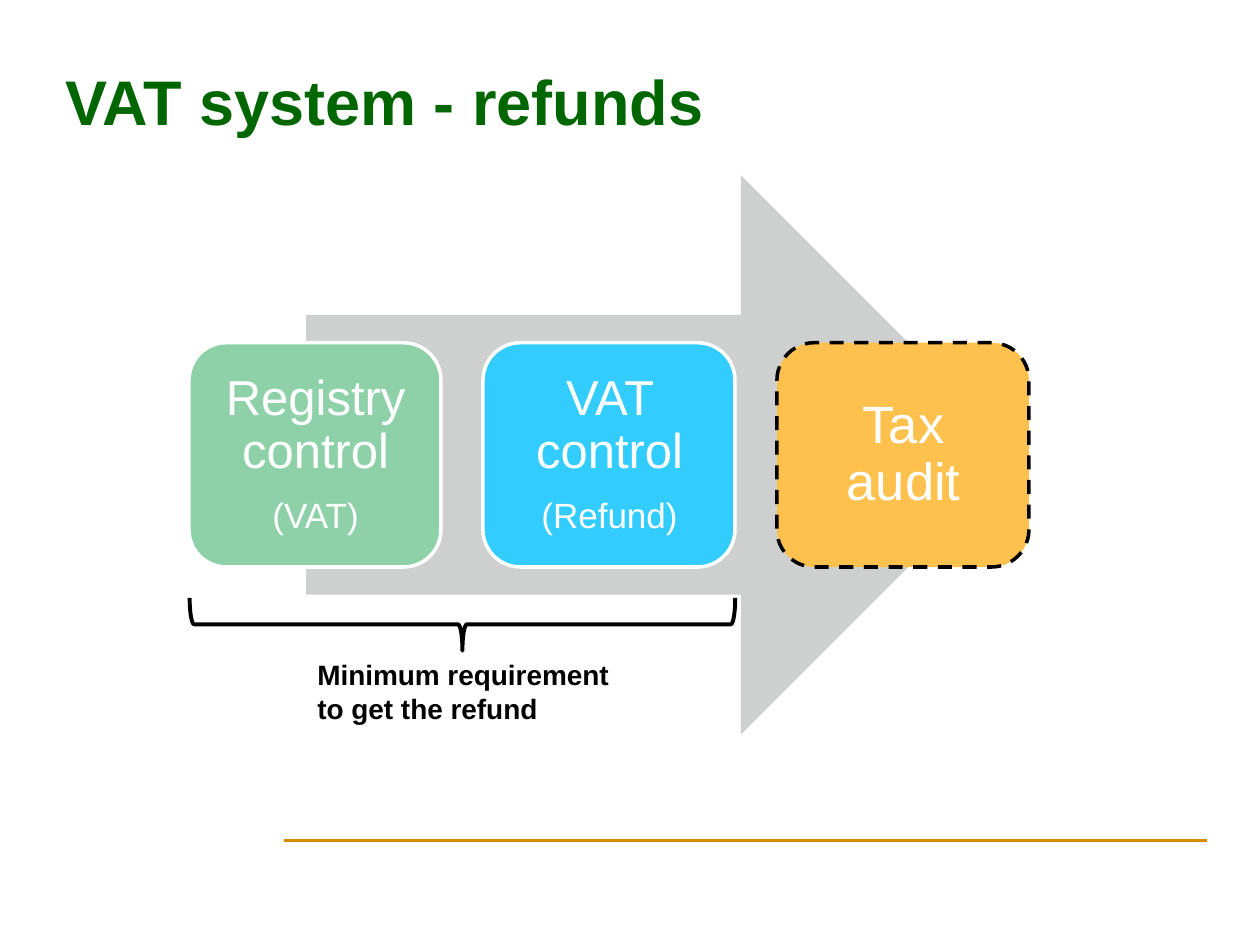
from lxml import etree
from pptx import Presentation
from pptx.dml.color import RGBColor
from pptx.enum import dml, shapes, text
from pptx.oxml import ns
from pptx.util import Inches, Pt

STEPS = [
    ("8ED1A9", "FFFFFF", [("Registry control", 28), ("(VAT)", 20)]),
    ("33CCFF", "FFFFFF", [("VAT control", 28), ("(Refund)", 20)]),
    ("FFC14D", "000000", [("Tax audit", 30)]),
]


def rgb(value):
    """Turn a hex string into a colour."""
    return RGBColor.from_string(value)


def add_span(para, words, size, color, bold=False):
    """Add one formatted run to a paragraph."""
    span = para.add_run()
    span.text = words
    span.font.name = "Arial"
    span.font.size = Pt(size)
    span.font.bold = bold
    span.font.color.rgb = rgb(color)


def add_figure(page, kind, place, fill, line=None, width=2):
    """Add a preset shape with a flat fill and an optional outline."""
    figure = page.shapes.add_shape(kind, *map(Inches, place))
    figure.shadow.inherit = False
    figure.fill.solid()
    figure.fill.fore_color.rgb = rgb(fill)
    if line:
        figure.line.color.rgb = rgb(line)
        figure.line.width = Pt(width)
    else:
        figure.line.fill.background()
    return figure


def add_label(page, place, words, size, color, anchor):
    """Add a bold, left-aligned text box."""
    box = page.shapes.add_textbox(*map(Inches, place))
    frame = box.text_frame
    frame.word_wrap = True
    frame.vertical_anchor = anchor
    add_span(frame.paragraphs[0], words, size, color, bold=True)


def add_step(page, left, fill, line, lines):
    """Add a rounded process step with its centred lines of text."""
    step = add_figure(page, shapes.MSO_SHAPE.ROUNDED_RECTANGLE,
                      (left, 2.72, 2, 1.78), fill, line)
    if line == "000000":
        step.line.dash_style = dml.MSO_LINE.DASH
    box = page.shapes.add_textbox(Inches(left + 0.09), Inches(2.81),
                                  Inches(1.83), Inches(1.6))
    frame = box.text_frame
    frame.word_wrap = True
    frame.vertical_anchor = text.MSO_ANCHOR.MIDDLE
    frame.margin_left = frame.margin_right = Inches(0.12)
    frame.margin_top = frame.margin_bottom = Inches(0.12)
    for index, (words, size) in enumerate(lines):
        para = frame.add_paragraph() if index else frame.paragraphs[0]
        para.alignment = text.PP_ALIGN.CENTER
        para.line_spacing = 0.9
        if index < len(lines) - 1:
            para.space_after = Pt(11)
        add_span(para, words, size, "FFFFFF")


def add_rule(page, left, right, top, color, width):
    """Add a horizontal line without a shadow."""
    rule = page.shapes.add_connector(shapes.MSO_CONNECTOR.STRAIGHT, Inches(left),
                                     Inches(top), Inches(right), Inches(top))
    rule.line.color.rgb = rgb(color)
    rule.line.width = Pt(width)
    etree.SubElement(rule._element.spPr, ns.qn("a:effectLst"))


def main():
    """Build the slide and save it."""
    deck = Presentation()
    deck.slide_width, deck.slide_height = Inches(10), Inches(7.5)
    page = deck.slides.add_slide(deck.slide_layouts[6])
    add_rule(page, 2.25, 9.58, 6.67, "D58B00", 1.5)
    brace = add_figure(page, shapes.MSO_SHAPE.RIGHT_BRACE,
                       (3.46, 2.79, 0.42, 4.33), "FFFFFF", "000000", 2.25)
    brace.rotation = 90
    add_label(page, (0.42, 0.17, 8.5, 1.25), "VAT system - refunds",
              36, "006600", text.MSO_ANCHOR.MIDDLE)
    add_label(page, (2.42, 5.17, 2.58, 0.64), "Minimum requirement to get the refund",
              16, "000000", text.MSO_ANCHOR.TOP)
    add_figure(page, shapes.MSO_SHAPE.RIGHT_ARROW, (2.43, 1.39, 5.67, 4.44), "CDD0CE")
    for index, (fill, line, lines) in enumerate(STEPS):
        add_step(page, 1.5 + index * 7 / 3, fill, line, lines)
    deck.save("out.pptx")


if __name__ == "__main__":
    main()
